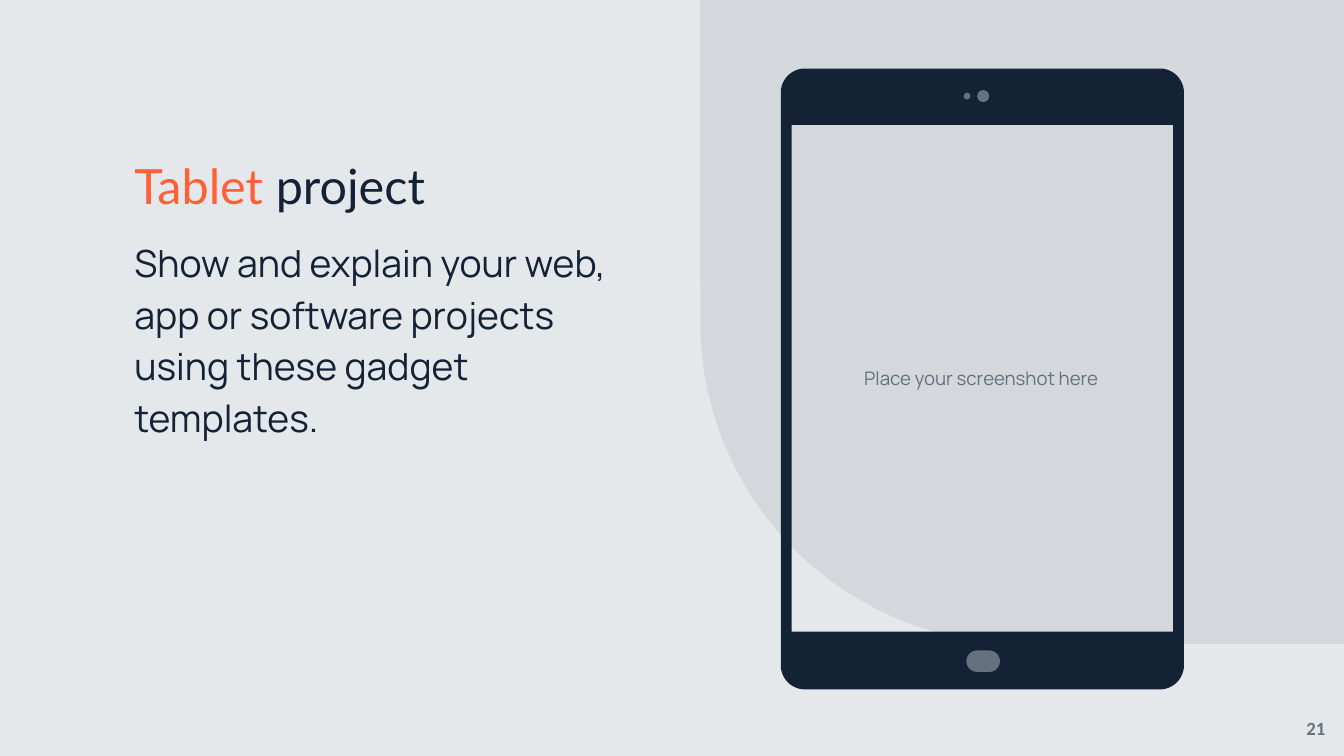
import dataclasses
import math

import lxml.etree
import pptx
import pptx.dml.color
import pptx.enum.shapes
import pptx.enum.text
import pptx.oxml.ns
import pptx.util

Inches = pptx.util.Inches
Kind = pptx.enum.shapes.MSO_SHAPE
Align = pptx.enum.text.PP_ALIGN
Anchor = pptx.enum.text.MSO_ANCHOR


@dataclasses.dataclass(frozen=True)
class Theme:
    ground: str = "E5E8EB"
    navy: str = "142236"
    orange: str = "FF6035"
    gray: str = "667180"
    head: str = "Lato"
    body: str = "Manrope"
    digit: str = "Calibri"
    large: int = 26
    mid: int = 20
    small: int = 10


THEME = Theme()


def color(code):
    return pptx.dml.color.RGBColor.from_string(code)


def paint(shape, code, alpha=None):
    """Give a shape a plain fill, with alpha in percent, and no line or shadow."""
    shape.shadow.inherit = False
    shape.fill.solid()
    shape.fill.fore_color.rgb = color(code)
    shape.line.fill.background()
    if alpha is not None:
        tint = shape.fill._xPr.find(".//" + pptx.oxml.ns.qn("a:srgbClr"))
        lxml.etree.SubElement(tint, pptx.oxml.ns.qn("a:alpha"), val=str(alpha * 1000))


def add_block(slide, kind, box, code, adjust=None, alpha=None):
    block = slide.shapes.add_shape(kind, *map(Inches, box))
    if adjust is not None:
        block.adjustments[0] = adjust
    paint(block, code, alpha)
    return block


def set_text(shape, runs, size, font, align=Align.LEFT, anchor=Anchor.TOP,
             inset=0, space=1.0, bold=False):
    """Fill a text shape with one paragraph of (text, colour) runs."""
    frame = shape.text_frame
    frame.word_wrap = True
    frame.auto_size = pptx.enum.text.MSO_AUTO_SIZE.NONE
    frame.vertical_anchor = anchor
    frame.margin_left = frame.margin_right = Inches(inset)
    frame.margin_top = frame.margin_bottom = Inches(inset)
    para = frame.paragraphs[0]
    para.alignment = align
    para.line_spacing = space
    para.space_before = pptx.util.Pt(0)
    for text, code in runs:
        run = para.add_run()
        run.text = text
        run.font.size = pptx.util.Pt(size)
        run.font.name = font
        run.font.bold = bold
        run.font.color.rgb = color(code)


def add_text(slide, box, *args, **options):
    set_text(slide.shapes.add_textbox(*map(Inches, box)), *args, **options)


def add_title(slide, box, runs):
    title = slide.shapes.title
    title.left, title.top, title.width, title.height = map(Inches, box)
    set_text(title, runs, THEME.large, THEME.head, anchor=Anchor.BOTTOM, space=0.9)


def round_path(box, radius, steps=12):
    """Return the points of a rectangle with round corners."""
    left, top, width, height = box
    right, base = left + width - radius, top + height - radius
    left, top = left + radius, top + radius
    hubs = [(right, base), (left, base), (left, top), (right, top)]
    points = []
    for turn, (x, y) in enumerate(hubs):
        for step in range(steps + 1):
            angle = math.pi / 2 * (turn + step / steps)
            points.append((Inches(x + radius * math.cos(angle)),
                           Inches(y + radius * math.sin(angle))))
    return points


def add_frame(slide, box, radius, hole):
    """Draw a round-cornered frame around an open screen."""
    outer = round_path(box, radius)
    left, top, width, height = map(Inches, hole)
    right, base = left + width, top + height
    pen = slide.shapes.build_freeform(*outer[0])
    pen.add_line_segments(outer[1:], close=True)
    pen.move_to(left, top)
    pen.add_line_segments([(left, base), (right, base), (right, top)], close=True)
    paint(pen.convert_to_shape(), THEME.navy)


def add_tablet(slide):
    add_frame(slide, (5.81, 0.51, 3, 4.62), 0.18, (5.89, 0.93, 2.84, 3.77))
    add_block(slide, Kind.ROUNDED_RECTANGLE, (7.19, 4.84, 0.25, 0.16), THEME.gray, 0.5)
    for x, y, size in ((7.17, 0.69, 0.05), (7.27, 0.67, 0.09)):
        add_block(slide, Kind.OVAL, (x, y, size, size), THEME.gray)


def main():
    deck = pptx.Presentation()
    deck.slide_width, deck.slide_height = Inches(10), Inches(10 * 9 / 16)
    slide = deck.slides.add_slide(deck.slide_layouts[5])
    slide.background.fill.solid()
    slide.background.fill.fore_color.rgb = color(THEME.ground)

    panel = add_block(slide, Kind.ROUND_1_RECTANGLE, (5.21, 0, 4.79, 4.79),
                      THEME.navy, 0.5, alpha=8)
    panel.rotation = 180
    corner = (9.58, 5.21, 0.42, 0.42)
    add_block(slide, Kind.ROUND_1_RECTANGLE, corner, THEME.ground, 0.5)
    add_text(slide, (5.88, 0.93, 2.84, 3.76),
             [("Place your screenshot here", THEME.gray)], THEME.small, THEME.body,
             align=Align.CENTER, anchor=Anchor.MIDDLE, inset=0.1)
    add_text(slide, corner, [("21", THEME.gray)], THEME.small, THEME.digit,
             align=Align.CENTER, anchor=Anchor.MIDDLE, bold=True)
    add_tablet(slide)
    add_text(slide, (1, 1.74, 3.79, 3.04),
             [("Show and explain your web, app or software projects "
               "using these gadget templates.", THEME.navy)],
             THEME.mid, THEME.body, space=1.15)
    add_title(slide, (1, 0.91, 3.79, 0.69),
              [("Tablet", THEME.orange), (" project", THEME.navy)])
    deck.save("out.pptx")


if __name__ == "__main__":
    main()
